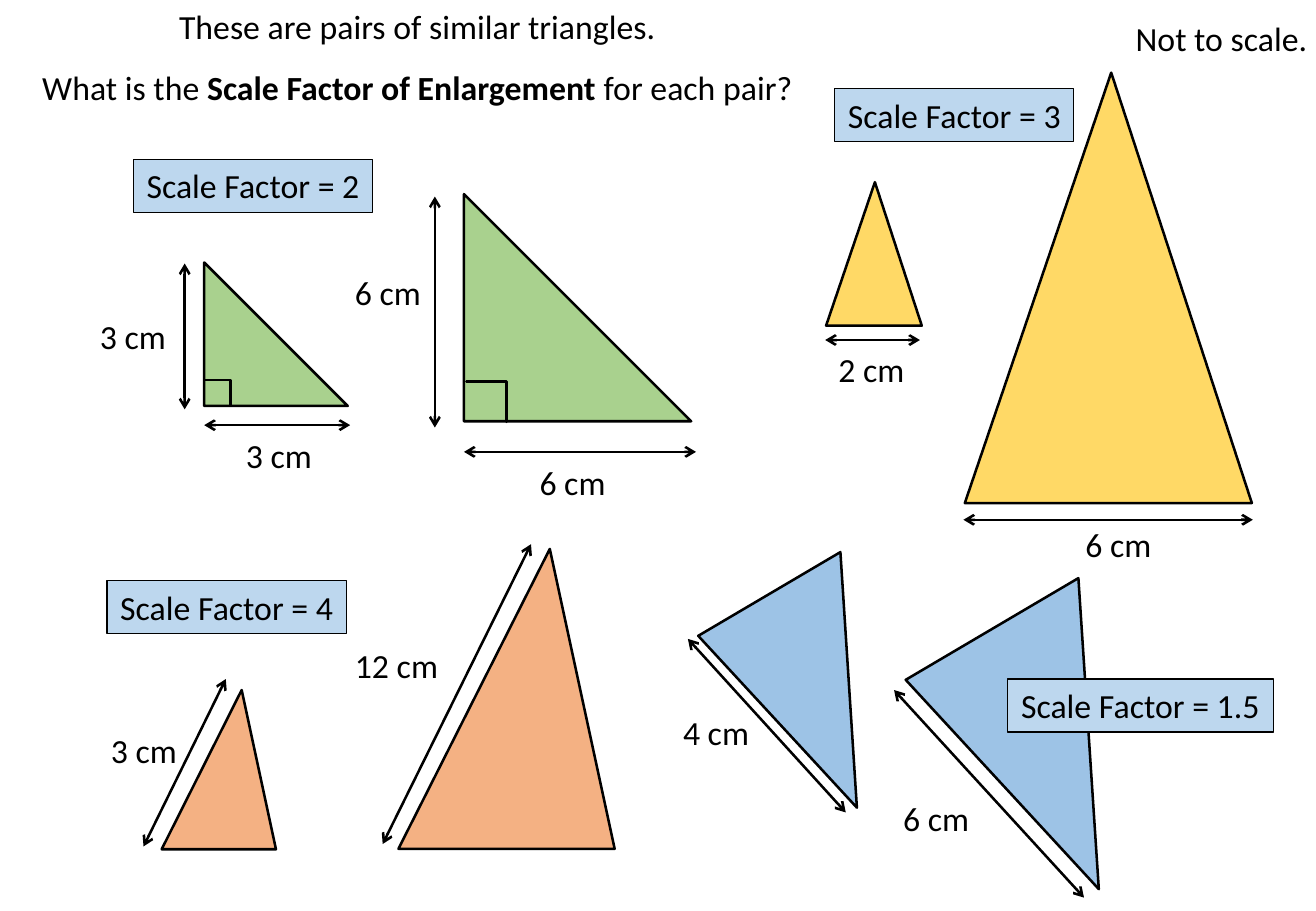
from lxml.etree import SubElement
from pptx import Presentation
from pptx.dml.color import RGBColor
from pptx.enum.shapes import MSO_CONNECTOR, MSO_SHAPE
from pptx.enum.text import MSO_ANCHOR, PP_ALIGN
from pptx.oxml.ns import qn
from pptx.util import Cm, Pt

COLOURS = {
    "ink": "000000",
    "green": "A9D18E",
    "yellow": "FFD966",
    "orange": "F4B183",
    "blue": "9DC3E6",
    "answer": "BDD7EE",
}
LINE_HEIGHT = 1.11

# Each triangle: left, top, width, height
# Each side: arrow start x, y, end x, y, then label text, left, top, width
PAIRS = [
    {
        "colour": "green", "apex": 0, "rotation": 0,
        "triangles": [(4.27, 5.49, 3, 3), (9.7, 4.06, 4.75, 4.75)],
        "right_angles": [(4.29, 7.95, 0.53, 0.53), (9.75, 7.98, 0.84, 0.84)],
        "sides": [
            (4.27, 8.89, 7.32, 8.89, "3 cm", 4.88, 8.97, 1.9),
            (3.86, 5.51, 3.86, 8.56, "3 cm", 1.83, 6.48, 1.9),
            (9.7, 9.45, 14.55, 9.45, "6 cm", 11.02, 9.53, 1.9),
            (9.09, 4.11, 9.09, 8.94, "6 cm", 7.16, 5.56, 1.9),
        ],
        "answer": ("2", 2.79, 3.33, 5),
    },
    {
        "colour": "yellow", "apex": 0.51, "rotation": 0,
        "triangles": [(17.27, 3.81, 2, 3), (20.17, 1.52, 6, 9)],
        "right_angles": [],
        "sides": [
            (17.25, 7.11, 19.23, 7.11, "2 cm", 17.27, 7.16, 1.9),
            (20.14, 10.87, 26.19, 10.87, "6 cm", 22.43, 10.82, 1.9),
        ],
        "answer": ("3", 17.45, 1.85, 5),
    },
    {
        "colour": "orange", "apex": 0.7, "rotation": 0,
        "triangles": [(3.38, 14.43, 2.39, 3.33), (8.33, 11.48, 4.52, 6.27)],
        "right_angles": [],
        "sides": [
            (4.72, 14.2, 3, 17.7, "3 cm", 2.06, 15.14, 1.9),
            (11.1, 11.38, 8, 17.65, "12 cm", 7.16, 13.36, 2.26),
        ],
        "answer": ("4", 2.24, 12.14, 5),
    },
    {
        "colour": "blue", "apex": 0.7, "rotation": 149.5,
        "triangles": [(15.57, 12.09, 3.45, 4.78), (20.12, 12.75, 4.19, 5.82)],
        "right_angles": [],
        "sides": [
            (14.38, 13.36, 17.68, 16.99, "4 cm", 14.02, 14.76, 1.9),
            (18.69, 14.43, 22.66, 18.77, "6 cm", 18.62, 16.56, 1.9),
        ],
        "answer": ("1.5", 21.06, 14.2, 5.56),
    },
]


def colour(name):
    return RGBColor.from_string(COLOURS[name])


def write_text(shape, paragraphs):
    """Fill a shape with centred paragraphs, each a list of (text, bold) runs."""
    frame = shape.text_frame
    frame.word_wrap = False
    frame.vertical_anchor = MSO_ANCHOR.TOP
    for index, runs in enumerate(paragraphs):
        paragraph = frame.add_paragraph() if index else frame.paragraphs[0]
        paragraph.alignment = PP_ALIGN.CENTER
        if index:
            paragraph.space_before = Pt(12)
        for text, bold in runs:
            run = paragraph.add_run()
            run.text = text
            run.font.name = "Calibri"
            run.font.size = Pt(20)
            run.font.bold = bold
            run.font.color.rgb = colour("ink")


def add_text(slide, paragraphs, left, top, width, height=LINE_HEIGHT):
    box = slide.shapes.add_textbox(Cm(left), Cm(top), Cm(width), Cm(height))
    write_text(box, paragraphs)


def add_figure(slide, kind, place, fill, adjustments=(), rotation=0, line_width=1.5):
    shape = slide.shapes.add_shape(kind, *(Cm(length) for length in place))
    for index, value in enumerate(adjustments):
        shape.adjustments[index] = value
    shape.rotation = rotation
    shape.shadow.inherit = False
    shape.fill.solid()
    shape.fill.fore_color.rgb = colour(fill)
    shape.line.color.rgb = colour("ink")
    shape.line.width = Pt(line_width)
    return shape


def add_double_arrow(slide, *ends):
    connector = slide.shapes.add_connector(
        MSO_CONNECTOR.STRAIGHT, *(Cm(length) for length in ends))
    connector.line.color.rgb = colour("ink")
    connector.line.width = Pt(1.5)
    properties = connector._element.spPr
    for end in ("a:headEnd", "a:tailEnd"):
        SubElement(properties.find(qn("a:ln")), qn(end), type="arrow")
    SubElement(properties, qn("a:effectLst"))


def add_answer(slide, factor, left, top, width):
    box = add_figure(slide, MSO_SHAPE.RECTANGLE, (left, top, width, LINE_HEIGHT),
                     "answer", line_width=0.75)
    write_text(box, [[(f"Scale Factor = {factor}", False)]])


def add_pair(slide, pair):
    for place in pair["triangles"]:
        add_figure(slide, MSO_SHAPE.ISOSCELES_TRIANGLE, place, pair["colour"],
                   [pair["apex"]], pair["rotation"])
    for place in pair["right_angles"]:
        add_figure(slide, MSO_SHAPE.CORNER, place, pair["colour"], [0, 0], 180)
    for *ends, text, left, top, width in pair["sides"]:
        add_double_arrow(slide, *ends)
        add_text(slide, [[(text, False)]], left, top, width)
    add_answer(slide, *pair["answer"])


def main():
    presentation = Presentation()
    presentation.slide_width = Cm(27.51)
    presentation.slide_height = Cm(19.05)
    slide = presentation.slides.add_slide(presentation.slide_layouts[6])
    question = [
        [("These are pairs of similar triangles.", False)],
        [("What is the ", False), ("Scale Factor of Enlargement ", True),
         ("for each pair?", False)],
    ]
    add_text(slide, question, 0.56, 0, 16.33, 2.39)
    add_text(slide, [[("Not to scale.", False)]], 23.39, 0.25, 4.29)
    for pair in PAIRS:
        add_pair(slide, pair)
    presentation.save("out.pptx")


if __name__ == "__main__":
    main()
